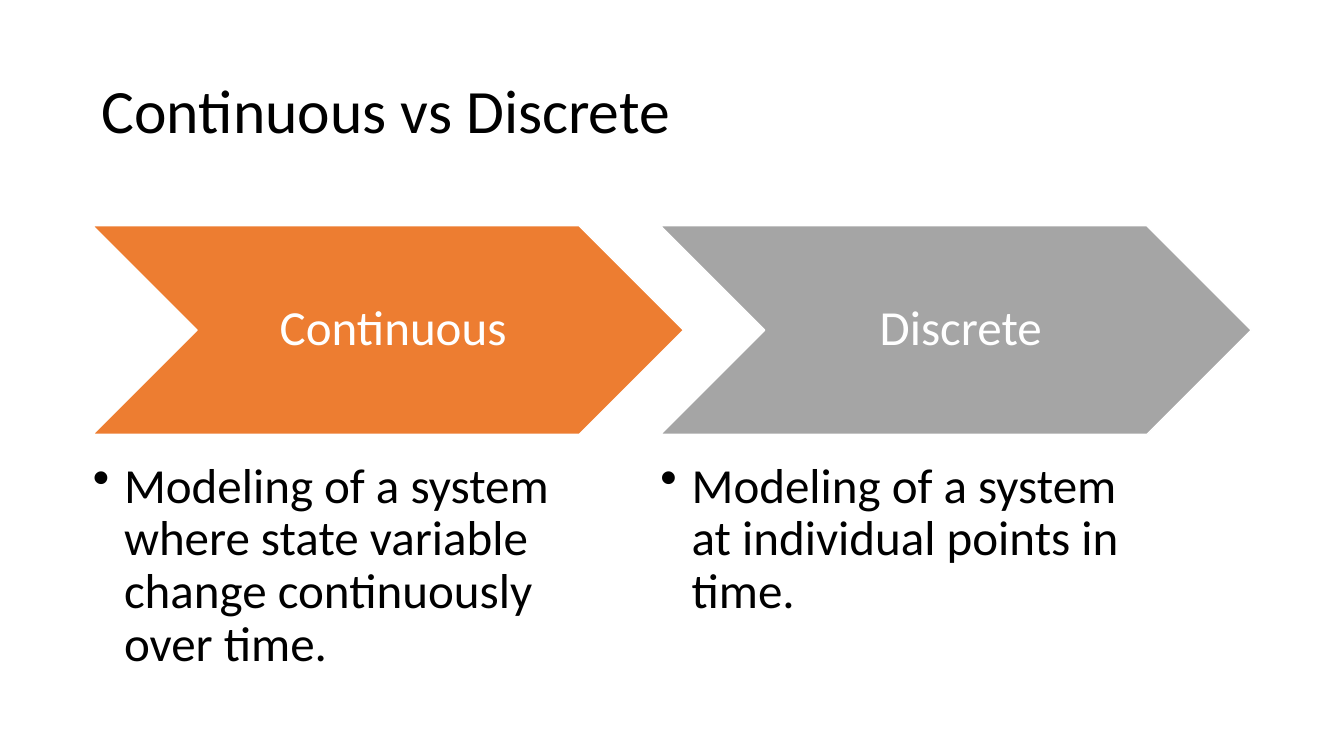
import pptx
import pptx.util
import pptx.dml.color
import pptx.enum.shapes
import pptx.enum.text
import pptx.oxml.ns
import lxml.etree
from dataclasses import dataclass

ALIGN = pptx.enum.text.PP_ALIGN
ANCHOR = pptx.enum.text.MSO_ANCHOR


@dataclass(frozen=True)
class Theme:
    font: str = "Calibri"
    title_size: int = 44
    text_size: int = 35
    ink: str = "000000"
    paper: str = "FFFFFF"
    continuous: str = "ED7D31"
    discrete: str = "A5A5A5"


def px(n):
    return pptx.util.Emu(n * 9144)


def rgb(code):
    return pptx.dml.color.RGBColor.from_string(code)


class Deck:
    def __init__(self, theme):
        self.theme = theme
        self.prs = pptx.Presentation()
        self.prs.slide_width, self.prs.slide_height = px(1333), px(750)
        self.s = self.prs.slides.add_slide(self.prs.slide_layouts[6])

    def text(self, box, text, size, color, insets=(0, 0, 0, 0),
             anchor=ANCHOR.TOP, align=ALIGN.LEFT):
        tf = self.s.shapes.add_textbox(*map(px, box)).text_frame
        tf.word_wrap = True
        tf.vertical_anchor = anchor
        tf.margin_left, tf.margin_top, tf.margin_right, tf.margin_bottom = map(px, insets)
        p = tf.paragraphs[0]
        p.alignment = align
        p.line_spacing = 0.9
        r = p.add_run()
        r.text = text
        r.font.name = self.theme.font
        r.font.size = pptx.util.Pt(size)
        r.font.color.rgb = rgb(color)
        return p

    def bullet(self, box, text):
        p = self.text(box, text, self.theme.text_size, self.theme.ink)
        pPr = p._p.get_or_add_pPr()
        pPr.set("marL", str(px(31)))
        pPr.set("indent", str(-px(31)))
        bu = lxml.etree.SubElement(pPr, pptx.oxml.ns.qn("a:buChar"))
        bu.set("char", "•")

    def chevron(self, box, label, fill):
        sp = self.s.shapes.add_shape(pptx.enum.shapes.MSO_SHAPE.CHEVRON, *map(px, box))
        sp.shadow.inherit = False
        sp.fill.solid()
        sp.fill.fore_color.rgb = rgb(fill)
        sp.line.color.rgb = rgb(self.theme.paper)
        sp.line.width = pptx.util.Pt(1)
        x, y, w, h = box
        notch = h // 2
        self.text((x + notch, y, w - 2 * notch, h), label, self.theme.text_size,
                  self.theme.paper, (15, 5, 5, 5), ANCHOR.MIDDLE, ALIGN.CENTER)


def main():
    theme = Theme()
    deck = Deck(theme)
    deck.text((91, 40, 1151, 145), "Continuous vs Discrete", theme.title_size,
              theme.ink, (10, 5, 10, 5), ANCHOR.MIDDLE)
    columns = [
        ("Continuous", theme.continuous,
         "Modeling of a system where state variable change continuously over time."),
        ("Discrete", theme.discrete,
         "Modeling of a system at individual points in time."),
    ]
    for i, (label, fill, detail) in enumerate(columns):
        x = 92 + 563 * i
        deck.chevron((x, 224, 586, 207), label, fill)
        deck.bullet((x, 457, 469, 215), detail)
    deck.prs.save("out.pptx")


if __name__ == "__main__":
    main()
